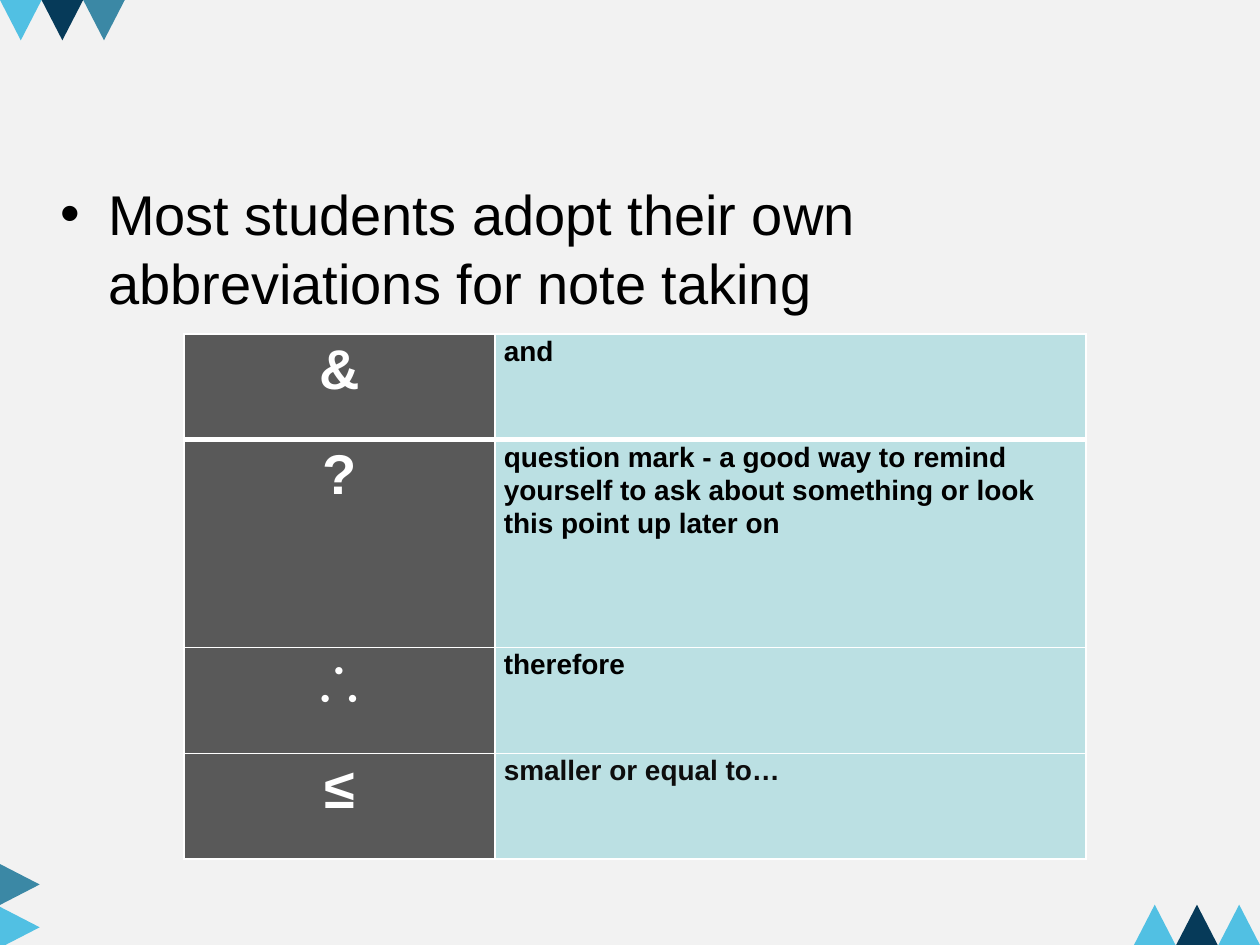
from lxml import etree
from pptx import Presentation
from pptx.dml.color import RGBColor as RGB
from pptx.enum.shapes import MSO_SHAPE as Shape
from pptx.enum.text import PP_ALIGN as Align
from pptx.oxml.ns import qn
from pptx.util import Inches, Pt

THEME = {
    "back": "F2F2F2", "sky": "51C0E3", "navy": "063A59", "teal": "3B88A5",
    "dark": "595959", "pale": "BBE0E3", "white": "FFFFFF",
    "black": "000000", "soft": "0D0D0D",
    "font": "Arial", "big": 32, "small": 16,
}

POINT = "Most students adopt their own abbreviations for note taking"
# symbol, meaning, meaning colour, row height
ROWS = [
    ("&", "and", "black", 0.84),
    ("?", "question mark - a good way to remind yourself to ask about "
          "something or look this point up later on", "black", 1.65),
    ("∴", "therefore", "black", 0.84),
    ("≤", "smaller or equal to…", "soft", 0.84),
]
COLS = [2.47, 4.69]
# left, top, step across, step down, turn, colours
BANDS = [
    (0, 0, 0.33, 0, 180, ["sky", "navy", "teal"]),
    (9, 7.18, 0.335, 0, 0, ["sky", "navy", "sky"]),
    (-0.01, 6.86, 0, 0.34, 90, ["teal", "sky"]),
]


def color(name):
    return RGB.from_string(THEME[name])


def put(frame, text, size="big", tint="black", bold=False,
        align=Align.LEFT, lead=1.0, bullet=None):
    frame.word_wrap = True
    para = frame.paragraphs[0]
    para.alignment = align
    para.line_spacing = lead
    if bullet:
        props = para._p.get_or_add_pPr()
        props.set("marL", str(Inches(0.38)))
        props.set("indent", str(Inches(-0.38)))
        etree.SubElement(props, qn("a:buFont"), typeface=THEME["font"])
        etree.SubElement(props, qn("a:buChar"), char=bullet)
    run = para.add_run()
    run.text = text
    font = run.font
    font.name, font.size, font.bold = THEME["font"], Pt(THEME[size]), bold
    font.color.rgb = color(tint)


def edge(cell, side, width):
    line = etree.SubElement(cell._tc.get_or_add_tcPr(), qn("a:ln" + side),
                            w=str(Pt(width)))
    fill = etree.SubElement(line, qn("a:solidFill"))
    etree.SubElement(fill, qn("a:srgbClr"), val=THEME["white"])


def draw_bands(slide):
    for left, top, across, down, turn, tints in BANDS:
        for i, tint in enumerate(tints):
            mark = slide.shapes.add_shape(
                Shape.ISOSCELES_TRIANGLE, Inches(left + i * across),
                Inches(top + i * down), Inches(0.33), Inches(0.32))
            mark.rotation = turn
            mark.shadow.inherit = False
            mark.fill.solid()
            mark.fill.fore_color.rgb = color(tint)
            mark.line.fill.background()


def draw_point(slide):
    box = slide.shapes.add_textbox(Inches(0.38), Inches(1.31),
                                   Inches(9.24), Inches(4.49))
    box.text_frame.margin_top = Inches(0.09)
    put(box.text_frame, POINT, bullet="•", lead=1.04)


def draw_table(slide):
    table = slide.shapes.add_table(
        len(ROWS), len(COLS), Inches(1.46), Inches(2.65),
        Inches(sum(COLS)), Inches(sum(row[-1] for row in ROWS))).table
    for col, width in zip(table.columns, COLS):
        col.width = Inches(width)
    for r, (sign, text, tint, height) in enumerate(ROWS):
        table.rows[r].height = Inches(height)
        looks = [
            (sign, "dark", dict(tint="white", align=Align.CENTER)),
            (text, "pale", dict(tint=tint, size="small")),
        ]
        for c, (words, fill, look) in enumerate(looks):
            cell = table.cell(r, c)
            cell.margin_left = cell.margin_right = Inches(0.07)
            cell.margin_top = cell.margin_bottom = 0
            put(cell.text_frame, words, bold=True, lead=1.07, **look)
            for side in "LRTB":
                thick = (r, side) in [(0, "B"), (1, "T")]
                edge(cell, side, 3 if thick else 1)
            cell.fill.solid()
            cell.fill.fore_color.rgb = color(fill)


def main():
    deck = Presentation()
    deck.slide_width, deck.slide_height = Inches(10), Inches(7.5)
    slide = deck.slides.add_slide(deck.slide_layouts[6])
    slide.background.fill.solid()
    slide.background.fill.fore_color.rgb = color("back")
    draw_bands(slide)
    draw_point(slide)
    draw_table(slide)
    deck.save("out.pptx")


if __name__ == "__main__":
    main()
